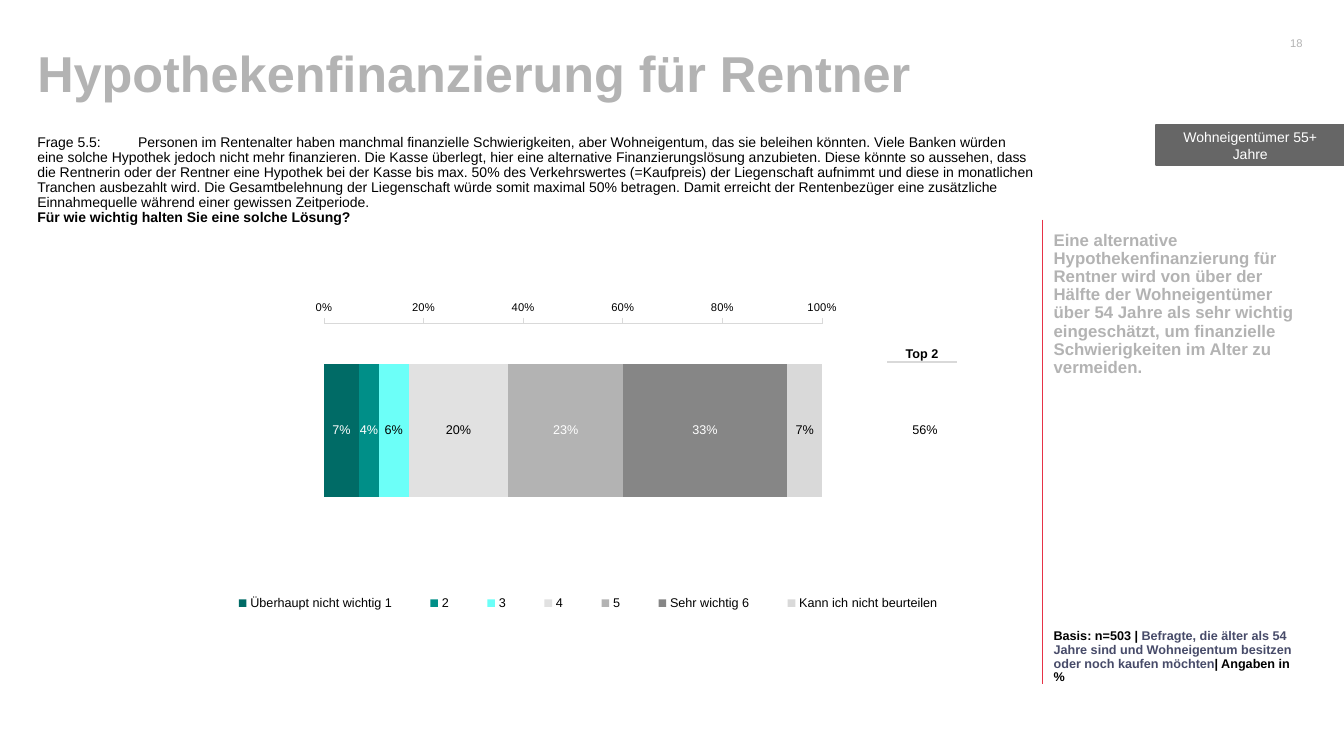
"""Build the slide on mortgage financing for pensioners."""
from lxml import etree
from pptx import Presentation
from pptx.chart.data import CategoryChartData
from pptx.dml.color import RGBColor
from pptx.enum.chart import XL_AXIS_CROSSES as CROSSES, XL_CHART_TYPE as CHART
from pptx.enum.chart import XL_LABEL_POSITION as LABEL, XL_LEGEND_POSITION as LEGEND
from pptx.enum.chart import XL_TICK_MARK as TICK
from pptx.enum.shapes import MSO_CONNECTOR, MSO_SHAPE
from pptx.enum.text import MSO_ANCHOR as ANCHOR, PP_ALIGN as ALIGN
from pptx.oxml import parse_xml
from pptx.oxml.ns import nsdecls, qn
from pptx.util import Inches, Pt

BLACK = RGBColor(0x00, 0x00, 0x00)
WHITE = RGBColor(0xFF, 0xFF, 0xFF)
GREY = RGBColor(0xB3, 0xB3, 0xB3)
LIGHT = RGBColor(0xD9, 0xD9, 0xD9)
SILVER = RGBColor(0xE1, 0xE1, 0xE1)
MID = RGBColor(0x86, 0x86, 0x86)
DARK = RGBColor(0x66, 0x66, 0x66)
RED = RGBColor(0xE7, 0x32, 0x46)
SLATE = RGBColor(0x47, 0x4B, 0x69)
TEAL = RGBColor(0x00, 0x6B, 0x66)
SEA = RGBColor(0x00, 0x8F, 0x88)
AQUA = RGBColor(0x6C, 0xFF, 0xF8)


def set_font(font, size, color, bold=False):
    for name, value in {"name": "Arial", "size": Pt(size), "bold": bold}.items():
        setattr(font, name, value)
    font.color.rgb = color


def add_layout(parent, index, box, inner=False):
    target = '<c:layoutTarget val="inner"/>' if inner else ""
    modes = "".join(f'<c:{k}Mode val="edge"/>' for k in "xy")
    sizes = "".join(f'<c:{k} val="{v}"/>' for k, v in zip("xywh", box))
    for old in parent.findall(qn("c:layout")):
        parent.remove(old)
    parent.insert(index, parse_xml(
        f'<c:layout {nsdecls("c")}><c:manualLayout>{target}{modes}{sizes}'
        "</c:manualLayout></c:layout>"))


prs = Presentation()
prs.slide_width, prs.slide_height = Inches(13.33), Inches(7.5)
s = prs.slides.add_slide(prs.slide_layouts[6])

divider = s.shapes.add_connector(
    MSO_CONNECTOR.STRAIGHT, Inches(10.34), Inches(2.18), Inches(10.34), Inches(6.79))
divider.line.color.rgb = RED
divider.line.width = Pt(1)
etree.SubElement(divider._element.spPr, qn("a:effectLst"))

question = (
    "Frage 5.5: \tPersonen im Rentenalter haben manchmal finanzielle Schwierigkeiten, "
    "aber Wohneigentum, das sie beleihen könnten. Viele Banken würden eine solche "
    "Hypothek jedoch nicht mehr finanzieren. Die Kasse überlegt, hier eine alternative "
    "Finanzierungslösung anzubieten. Diese könnte so aussehen, dass die Rentnerin oder "
    "der Rentner eine Hypothek bei der Kasse bis max. 50% des Verkehrswertes (=Kaufpreis) "
    "der Liegenschaft aufnimmt und diese in monatlichen Tranchen ausbezahlt wird. Die "
    "Gesamtbelehnung der Liegenschaft würde somit maximal 50% betragen. Damit erreicht "
    "der Rentenbezüger eine zusätzliche Einnahmequelle während einer gewissen Zeitperiode.")
finding = (
    "Eine alternative Hypothekenfinanzierung für Rentner wird von über der Hälfte der "
    "Wohneigentümer über 54 Jahre als sehr wichtig eingeschätzt, um finanzielle "
    "Schwierigkeiten im Alter zu vermeiden.")
sample = "Befragte, die älter als 54 Jahre sind und Wohneigentum besitzen oder noch kaufen möchten"

texts = [
    ((0.37, 1.34, 9.87, 0.84), 0, ANCHOR.TOP, ALIGN.LEFT, 0.9, 10,
     [(question, BLACK, False), ("\n", BLACK, False),
      ("Für wie wichtig halten Sie eine solche Lösung?", BLACK, True)]),
    ((0.37, 0.29, 10.5, 0.94), 0, ANCHOR.MIDDLE, ALIGN.LEFT, 0.9, 36,
     [("Hypothekenfinanzierung für Rentner", GREY, True)]),
    ((12.61, 0.27, 0.31, 0.31), 0, ANCHOR.MIDDLE, ALIGN.RIGHT, 1.0, 8,
     [("18", GREY, False)]),
    ((10.45, 2.18, 2.41, 3.46), 0.12, ANCHOR.TOP, ALIGN.LEFT, 0.9, 12,
     [(finding, GREY, True)]),
    ((10.45, 5.64, 2.41, 1.15), 0, ANCHOR.BOTTOM, ALIGN.LEFT, 0.9, 9,
     [("Basis: n=503 | ", BLACK, True), (sample, SLATE, True),
      ("| Angaben in %", BLACK, True)]),
]
for box, top, anchor, align, spacing, size, runs in texts:
    tf = s.shapes.add_textbox(*map(Inches, box)).text_frame
    frame = {"word_wrap": True, "vertical_anchor": anchor, "margin_left": 0,
             "margin_right": 0, "margin_top": Inches(top), "margin_bottom": 0}
    for name, value in frame.items():
        setattr(tf, name, value)
    p = tf.paragraphs[0]
    p.alignment, p.line_spacing = align, spacing
    for text, color, bold in runs:
        if text == "\n":
            p.add_line_break()
            continue
        r = p.add_run()
        r.text = text
        set_font(r.font, size, color, bold)

ratings = [
    ("Überhaupt nicht wichtig 1", 0.07, TEAL, WHITE),
    ("2", 0.04, SEA, WHITE),
    ("3", 0.06, AQUA, BLACK),
    ("4", 0.20, SILVER, BLACK),
    ("5", 0.23, GREY, WHITE),
    ("Sehr wichtig 6", 0.33, MID, WHITE),
    ("Kann ich nicht beurteilen", 0.07, LIGHT, BLACK),
]
data = CategoryChartData(number_format="0%")
data.categories = ["1"]
for name, share, _, _ in ratings:
    data.add_series(name, [share])
chart = s.shapes.add_chart(
    CHART.BAR_STACKED_100, Inches(0.35), Inches(2.96), Inches(9.88), Inches(3.15), data).chart
set_font(chart.font, 10, BLACK)
chart.has_title = False
chart.has_legend = True
chart.legend.position = LEGEND.BOTTOM
chart.legend.include_in_layout = False
set_font(chart.legend.font, 9, BLACK)

plot = chart.plots[0]
plot.gap_width, plot.overlap, plot.vary_by_categories = 60, 100, False
for series, (_, _, fill, label_color) in zip(plot.series, ratings):
    series.format.fill.solid()
    series.format.fill.fore_color.rgb = fill
    labels = series.data_labels
    label_format = {"show_value": True, "number_format": "0%",
                    "number_format_is_linked": False, "position": LABEL.CENTER}
    for name, value in label_format.items():
        setattr(labels, name, value)
    set_font(labels.font, 9, label_color)

cat_axis = chart.category_axis
cat_axis.reverse_order = True
cat_axis.crosses = CROSSES.MAXIMUM
cat_axis.visible = False
val_axis = chart.value_axis
axis_format = {"has_major_gridlines": False, "major_tick_mark": TICK.OUTSIDE,
               "minimum_scale": 0, "maximum_scale": 1, "major_unit": 0.2}
for name, value in axis_format.items():
    setattr(val_axis, name, value)
val_axis.format.line.color.rgb = LIGHT
val_axis.format.line.width = Pt(0.75)
val_axis.tick_labels.number_format = "0%"
val_axis.tick_labels.number_format_is_linked = False
set_font(val_axis.tick_labels.font, 8, BLACK)

plot_area = chart._chartSpace.chart.plotArea
add_layout(plot_area, 0, (0.29, 0.08, 0.5, 0.67), inner=True)
add_layout(chart.legend._element, 1, (0.17, 0.92, 0.77, 0.08))

tables = [
    ((9.05, 3.59, 0.71, 1.35), "56%", ALIGN.LEFT, False),
    ((8.79, 3.44, 0.71, 0.13), "Top 2", ALIGN.CENTER, True),
]
for box, text, align, is_header in tables:
    table = s.shapes.add_table(1, 1, *map(Inches, box)).table
    table.first_row = table.horz_banding = False
    cell = table.cell(0, 0)
    cell.text = text
    cell.vertical_anchor = ANCHOR.MIDDLE
    for side in ("left", "right", "top", "bottom"):
        setattr(cell, f"margin_{side}", 0)
    p = cell.text_frame.paragraphs[0]
    p.alignment = align
    set_font(p.runs[0].font, 9, BLACK, is_header)
    cell.fill.background()
    if is_header:
        cell._tc.get_or_add_tcPr().insert(0, parse_xml(
            f'<a:lnB {nsdecls("a")} w="{Pt(1)}"><a:solidFill>'
            f'<a:srgbClr val="{LIGHT}"/></a:solidFill></a:lnB>'))

sp = s.shapes.add_shape(
    MSO_SHAPE.RECTANGLE, Inches(11.47), Inches(1.24), Inches(1.86), Inches(0.4))
sp.shadow.inherit = False
sp.fill.solid()
sp.fill.fore_color.rgb = sp.line.color.rgb = DARK
sp.line.width = Pt(1.5)
tf = sp.text_frame
tf.word_wrap, tf.vertical_anchor = True, ANCHOR.MIDDLE
p = tf.paragraphs[0]
p.alignment = ALIGN.CENTER
r = p.add_run()
r.text = "Wohneigentümer 55+ Jahre"
set_font(r.font, 10, WHITE)

prs.save("out.pptx")
